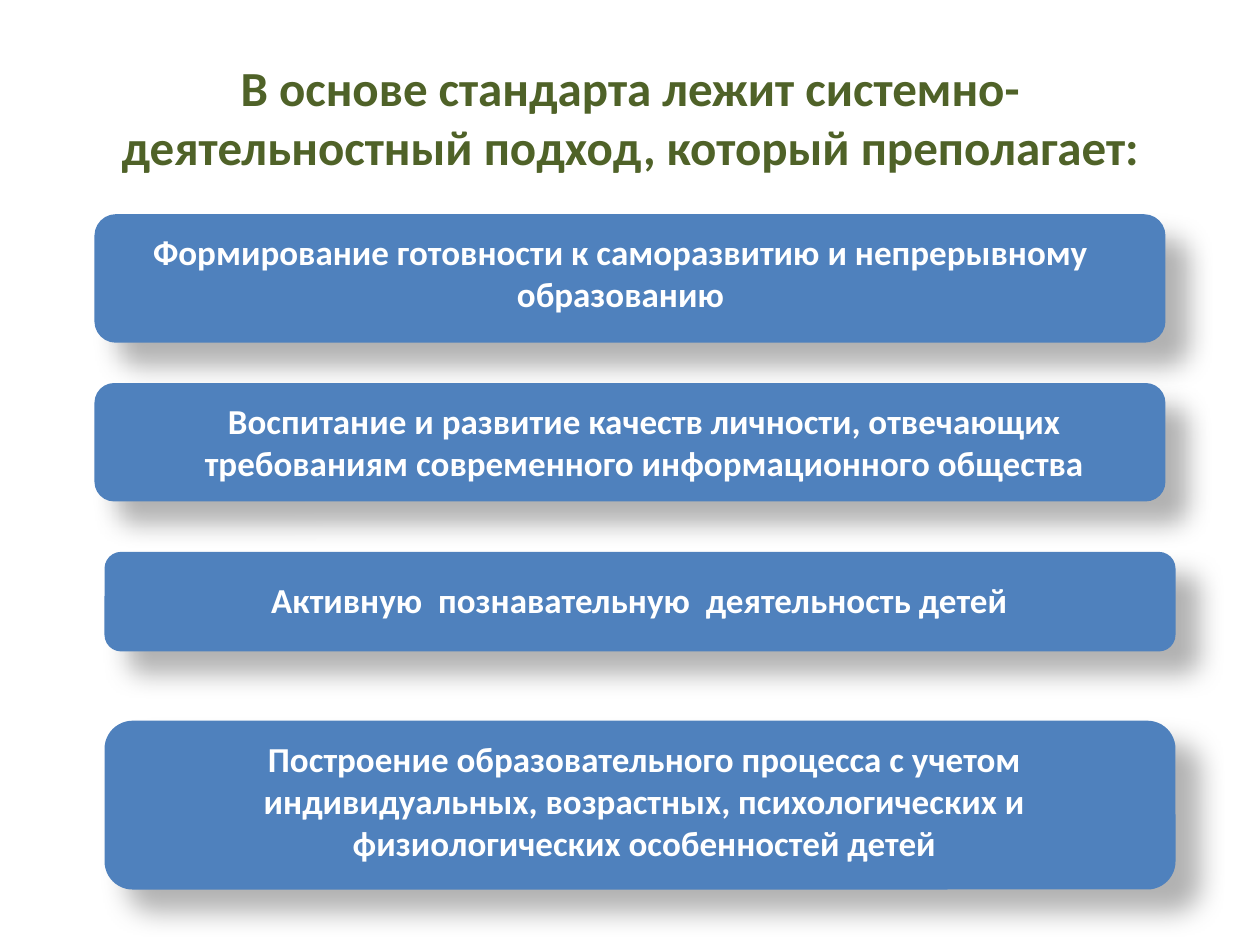
from lxml.etree import SubElement
from pptx import Presentation
from pptx.dml.color import RGBColor
from pptx.enum.shapes import MSO_SHAPE
from pptx.enum.text import MSO_ANCHOR, MSO_AUTO_SIZE, PP_ALIGN
from pptx.oxml.ns import qn
from pptx.util import Inches, Pt

GREEN = RGBColor(0x4F, 0x62, 0x28)
BLUE = RGBColor(0x4F, 0x81, 0xBD)
WHITE = RGBColor(0xFF, 0xFF, 0xFF)
BLACK = RGBColor(0x00, 0x00, 0x00)

FONT = "Calibri"
TITLE = "В основе стандарта лежит системно-деятельностный подход, который преполагает:"
PANEL_WIDTH = 8.5
FIRST_PANEL_TOP = 1.7
PANEL_STEP = 1.34

PRINCIPLES = [
    (0.75, 1.02, (0.83, 1.78, 8.19, 0.77),
     "Формирование готовности к саморазвитию и непрерывному образованию"),
    (0.75, 0.94, (0.9, 3.12, 8.43, 0.77),
     "Воспитание и развитие качеств личности, отвечающих требованиям "
     "современного информационного общества"),
    (0.83, 0.79, (0.9, 4.54, 8.35, 0.44),
     "Активную  познавательную  деятельность детей"),
    (0.83, 1.34, (0.98, 5.8, 8.27, 1.11),
     "Построение образовательного процесса с учетом индивидуальных, возрастных, "
     "психологических и физиологических особенностей детей"),
]


def add_soft_shadow(shape):
    shape.shadow.inherit = False
    effects = shape._element.spPr.find(qn("a:effectLst"))
    shadow = SubElement(effects, qn("a:outerShdw"), blurRad=str(Pt(15)),
                        dist=str(Pt(18)), dir=str(45 * 60000),
                        algn="tl", rotWithShape="0")
    color = SubElement(shadow, qn("a:srgbClr"), val=str(BLACK))
    SubElement(color, qn("a:alpha"), val="30000")


def add_panel(slide, left, top, height):
    panel = slide.shapes.add_shape(
        MSO_SHAPE.ROUNDED_RECTANGLE,
        Inches(left), Inches(top), Inches(PANEL_WIDTH), Inches(height))
    panel.fill.solid()
    panel.fill.fore_color.rgb = BLUE
    panel.line.fill.background()
    add_soft_shadow(panel)


def add_text(slide, box, text, size, color, anchor=MSO_ANCHOR.TOP,
             auto_size=MSO_AUTO_SIZE.SHAPE_TO_FIT_TEXT):
    text_frame = slide.shapes.add_textbox(*map(Inches, box)).text_frame
    text_frame.word_wrap = True
    text_frame.auto_size = auto_size
    text_frame.vertical_anchor = anchor
    text_frame.text = text
    paragraph = text_frame.paragraphs[0]
    paragraph.alignment = PP_ALIGN.CENTER
    font = paragraph.runs[0].font
    font.name = FONT
    font.size = Pt(size)
    font.bold = True
    font.color.rgb = color


def main():
    presentation = Presentation()
    presentation.slide_width = Inches(10)
    presentation.slide_height = Inches(7.5)
    slide = presentation.slides.add_slide(presentation.slide_layouts[6])

    add_text(slide, (0.5, 0.3, 9, 1.25), TITLE, 28, GREEN,
             MSO_ANCHOR.MIDDLE, MSO_AUTO_SIZE.NONE)
    for index, (left, height, text_box, text) in enumerate(PRINCIPLES):
        add_panel(slide, left, FIRST_PANEL_TOP + index * PANEL_STEP, height)
        add_text(slide, text_box, text, 20, WHITE)

    presentation.save("out.pptx")


if __name__ == "__main__":
    main()
